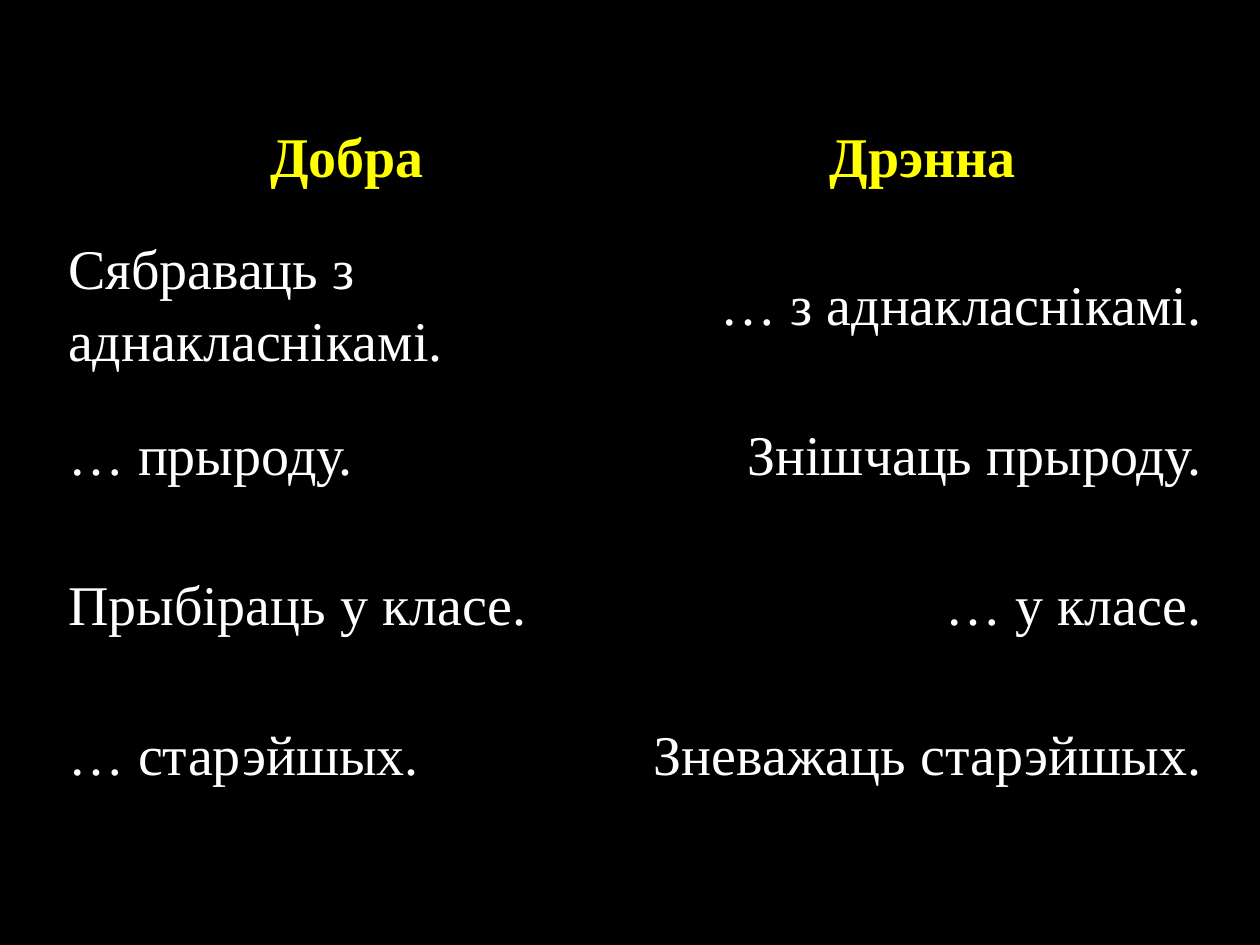
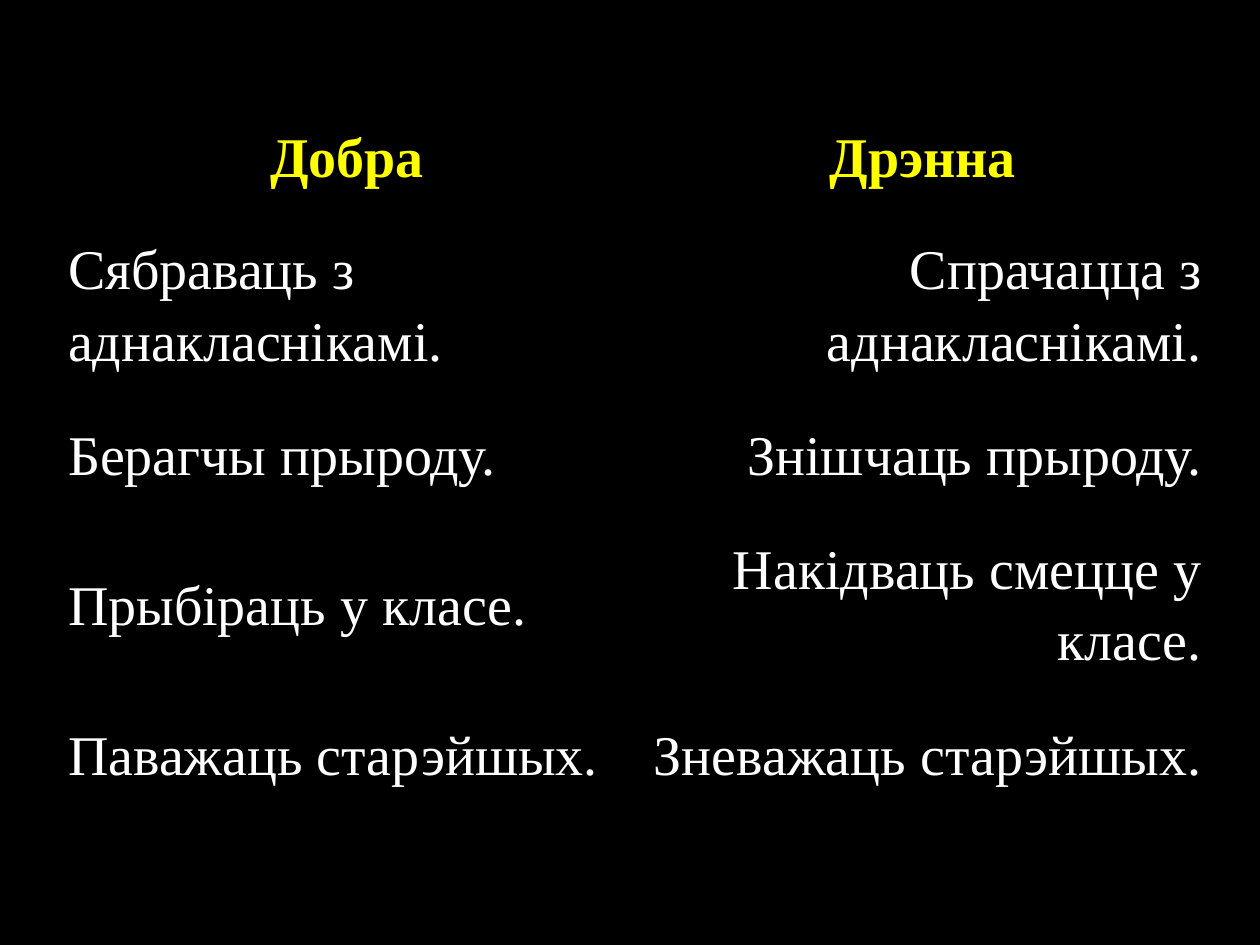
from dataclasses import dataclass

from pptx import Presentation
from pptx.dml.color import RGBColor
from pptx.enum.text import MSO_ANCHOR, PP_ALIGN
from pptx.oxml import parse_xml
from pptx.oxml.ns import nsdecls
from pptx.util import Inches, Pt


@dataclass(frozen=True)
class Theme:
    background: str = "000000"
    heading: str = "FFFF00"
    body: str = "FFFFFF"
    border: str = "000000"
    font: str = "Times New Roman"
    size: int = 32
    line_spacing: float = 1.15


theme = Theme()

# Content: good and bad behaviour, first with gaps, then with the answers
headings = ("Добра", "Дрэнна")
exercise = [
    ("Сябраваць з аднакласнікамі.", "… з аднакласнікамі."),
    ("… прыроду.", "Знішчаць прыроду."),
    ("Прыбіраць у класе.", "… у класе."),
    ("… старэйшых.", "Зневажаць старэйшых."),
]
answers = [
    ("Сябраваць з аднакласнікамі.", "Спрачацца з аднакласнікамі."),
    ("Берагчы прыроду.", "Знішчаць прыроду."),
    ("Прыбіраць у класе.", "Накідваць смецце у класе."),
    ("Паважаць старэйшых.", "Зневажаць старэйшых."),
]

# Table grid
left, top = 0.47, 0.94
column_width = 4.57
heading_height, pair_height = 0.86, 1.19
side_margin = 0.07
pair_alignments = (PP_ALIGN.LEFT, PP_ALIGN.RIGHT)


def add_borders(cell):
    """Draw a thin line on all four sides of a cell."""
    properties = cell._tc.get_or_add_tcPr()
    for side in ("lnL", "lnR", "lnT", "lnB"):
        properties.append(parse_xml(
            f'<a:{side} {nsdecls("a")} w="{Pt(1)}"><a:solidFill>'
            f'<a:srgbClr val="{theme.border}"/></a:solidFill></a:{side}>'))


def fill_cell(cell, text, alignment, is_heading):
    """Write one phrase into a cell and style it."""
    add_borders(cell)
    cell.fill.background()
    cell.margin_left = cell.margin_right = Inches(side_margin)
    cell.margin_top = cell.margin_bottom = 0
    cell.vertical_anchor = MSO_ANCHOR.TOP if is_heading else MSO_ANCHOR.MIDDLE
    cell.text_frame.text = text
    phrase = cell.text_frame.paragraphs[0]
    phrase.alignment = alignment
    phrase.line_spacing = theme.line_spacing
    font = phrase.runs[0].font
    font.name = theme.font
    font.size = Pt(theme.size)
    font.bold = is_heading
    font.color.rgb = RGBColor.from_string(
        theme.heading if is_heading else theme.body)


# Presentation with a shared black background
deck = Presentation()
deck.slide_width, deck.slide_height = Inches(10), Inches(7.5)
backdrop = deck.slide_master.background.fill
backdrop.solid()
backdrop.fore_color.rgb = RGBColor.from_string(theme.background)

# One comparison table per slide
for pairs in (exercise, answers):
    slide = deck.slides.add_slide(deck.slide_layouts[6])
    rows = [headings, *pairs]
    comparison = slide.shapes.add_table(
        len(rows), len(headings), Inches(left), Inches(top),
        Inches(column_width * len(headings)),
        Inches(heading_height + pair_height * len(pairs))).table
    comparison.first_row = comparison.horz_banding = False
    for column in comparison.columns:
        column.width = Inches(column_width)

    for row_index, row in enumerate(rows):
        is_heading = row_index == 0
        comparison.rows[row_index].height = Inches(
            heading_height if is_heading else pair_height)
        for column_index, text in enumerate(row):
            alignment = (PP_ALIGN.CENTER if is_heading
                         else pair_alignments[column_index])
            fill_cell(comparison.cell(row_index, column_index),
                      text, alignment, is_heading)

deck.save("out.pptx")
